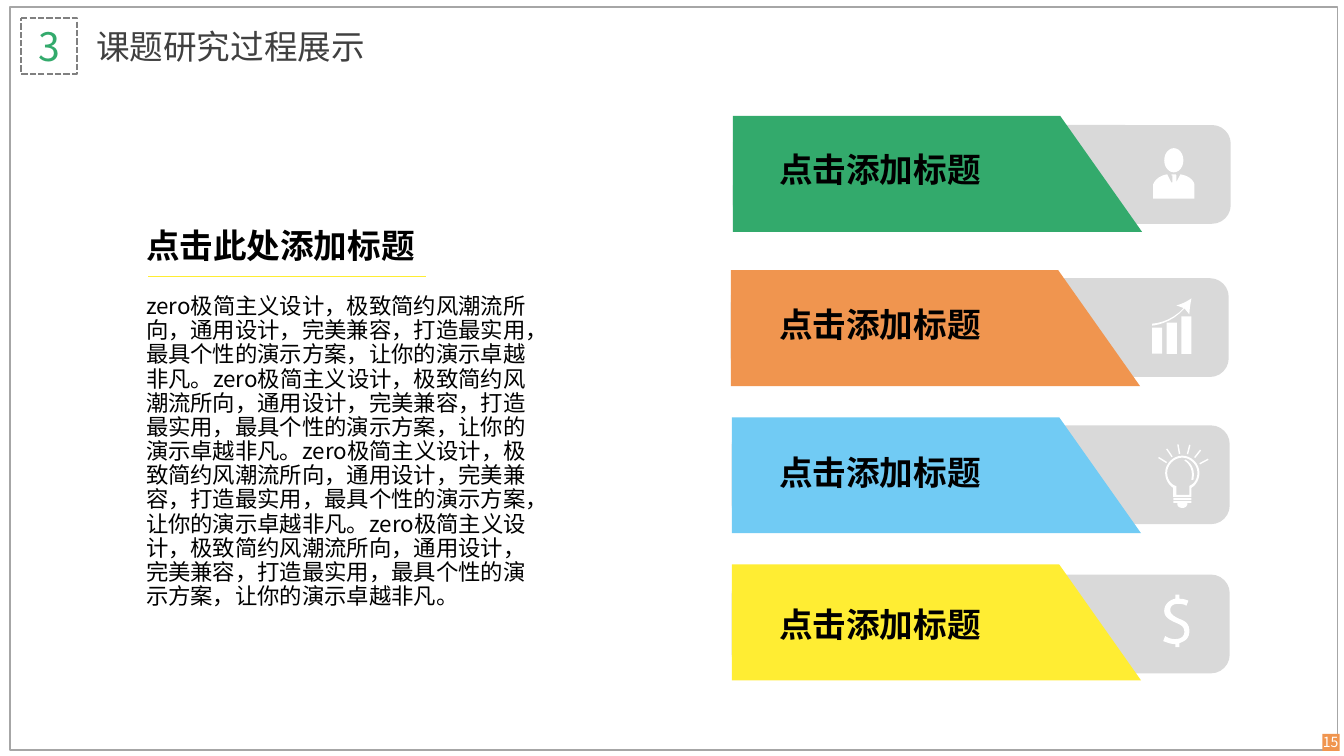
from dataclasses import dataclass
from math import cos, radians, sin

from lxml.etree import SubElement
from pptx import Presentation
from pptx.dml.color import RGBColor
from pptx.enum.dml import MSO_LINE
from pptx.enum.shapes import MSO_CONNECTOR, MSO_SHAPE
from pptx.enum.text import MSO_ANCHOR, MSO_AUTO_SIZE, PP_ALIGN
from pptx.oxml.ns import qn
from pptx.util import Inches, Pt


@dataclass(frozen=True)
class Theme:
    font: str = "Noto Sans CJK SC"
    green: str = "33AA6C"
    orange: str = "F0954F"
    blue: str = "71CBF4"
    yellow: str = "FFED33"
    white: str = "FFFFFF"
    black: str = "000000"
    tab: str = "D9D9D9"
    frame: str = "A6A6A6"
    dash: str = "808080"
    title: str = "404040"
    number_size: int = 28
    heading_size: int = 24
    body_size: int = 16
    page_size: int = 10


THEME = Theme()
SECTION_NUMBER = "3"
SECTION_TITLE = "课题研究过程展示"
PAGE_NUMBER = "15"
HEADING = "点击此处添加标题"
BODY = ("zero极简主义设计，极致简约风潮流所向，通用设计，完美兼容，打造最实用，"
        "最具个性的演示方案，让你的演示卓越非凡。") * 4
LABEL = "点击添加标题"

PERSON = {
    "ellipses": [(11, 0, 19, 24)],
    "outlines": [[[
        (27, 26), (23, 34), (23, 27), (23, 26, 22, 26, 21, 26), (19, 26, 18, 26, 18, 27),
        (19, 27), (19, 34), (18, 34), (14, 26), (7, 27, 2, 31, 0, 36),
        (0, 50), (41, 50), (41, 36), (40, 31, 34, 27, 27, 26)]]],
}
GROWTH = {
    "bars": [(14.5 * column, 55 - height, 10, height) for column, height in enumerate((26, 31, 37))],
    "outlines": [
        [[(0, 27), (0, 25), (0, 25, 18, 25, 33, 8), (33, 9), (19, 26, 0, 27, 0, 27)]],
        [[(39, 0), (38, 5, 37, 12, 37, 16), (32, 10), (24, 7), (29, 6, 35, 3, 39, 0)]]],
}
BULB = {
    "bars": [(15, 53, 18, 2), (15, 56, 18, 2)],
    "outlines": [
        [[(33, 52), (15, 52), (15, 43), (10, 40, 7, 34, 7, 28), (7, 19, 15, 11, 24, 11),
          (33, 11, 41, 19, 41, 28), (41, 34, 38, 40, 33, 43)],
         [(18, 50), (31, 50), (31, 41), (36, 39, 39, 34, 39, 28), (39, 20, 32, 13, 24, 13),
          (16, 13, 9, 20, 9, 28), (9, 34, 12, 39, 17, 41), (18, 41)]],
        [[(20, 57), (29, 57), (29, 57, 29, 58, 29, 59), (29, 61, 27, 63, 24, 63),
          (21, 63, 19, 61, 19, 59), (19, 58, 19, 57, 20, 57)]],
        [[(35, 35), (33, 35), (36, 21, 26, 16, 26, 16), (27, 15), (27, 15, 38, 20, 35, 35)]]],
    "rays": {"center": (24.5, 28), "radii": (19, 28.5), "half_width": 0.7,
             "angles": range(28, 149, 24)},
}
DOLLAR = {
    "outlines": [[[
        (26, 36), (26, 30, 23, 26, 16, 24), (10, 21, 7, 19, 7, 15), (7, 12, 9, 9, 15, 9),
        (19, 9, 22, 10, 23, 11), (25, 6), (23, 5, 20, 4, 16, 4), (16, 0), (12, 0), (12, 4),
        (6, 5, 1, 10, 1, 16), (1, 22, 6, 25, 13, 28), (18, 30, 21, 32, 21, 37),
        (21, 41, 18, 44, 12, 44), (8, 44, 5, 43, 2, 41), (0, 46), (3, 47, 7, 49, 12, 49),
        (12, 52), (16, 52), (16, 48), (23, 46, 26, 42, 26, 36)]]],
}

ROWS = [
    {"color": THEME.green, "left": 7.27, "banner": 1.15, "tab": 1.24, "label": 1.43,
     "icon": PERSON, "icon_at": (11.44, 1.47)},
    {"color": THEME.orange, "left": 7.25, "banner": 2.68, "tab": 2.76, "label": 2.97,
     "icon": GROWTH, "icon_at": (11.43, 2.96)},
    {"color": THEME.blue, "left": 7.26, "banner": 4.14, "tab": 4.22, "label": 4.43,
     "icon": BULB, "icon_at": (11.49, 4.41)},
    {"color": THEME.yellow, "left": 7.26, "banner": 5.6, "tab": 5.7, "label": 5.94,
     "icon": DOLLAR, "icon_at": (11.54, 5.9)},
]
BANNER_LENGTH, BANNER_HEIGHT = 4.06, 1.15
TAB_WIDTH, TAB_HEIGHT, TAB_ROUNDING = 4.94, 0.98, 0.19


def paint(shape, fill=None, line=None, width=1):
    shape.shadow.inherit = False
    if fill:
        shape.fill.solid()
        shape.fill.fore_color.rgb = RGBColor.from_string(fill)
    else:
        shape.fill.background()
    if line:
        shape.line.color.rgb = RGBColor.from_string(line)
        shape.line.width = Pt(width)
    else:
        shape.line.fill.background()
    return shape


def add_preset(shapes, kind, box, rounding=None, **look):
    shape = shapes.add_shape(kind, *map(Inches, box))
    if rounding is not None:
        shape.adjustments[0] = rounding
    return paint(shape, **look)


def write(shape, text, size, color, bold=False, align=PP_ALIGN.LEFT,
          anchor=MSO_ANCHOR.MIDDLE, wrap=True):
    frame = shape.text_frame
    frame.text = text
    frame.word_wrap = wrap
    frame.vertical_anchor = anchor
    paragraph = frame.paragraphs[0]
    paragraph.alignment = align
    run = paragraph.runs[0]
    run.font.size = Pt(size)
    run.font.bold = bold
    run.font.color.rgb = RGBColor.from_string(color)
    run.font.name = THEME.font
    SubElement(run._r.get_or_add_rPr(), qn("a:ea")).set("typeface", THEME.font)
    return paragraph


def add_text(slide, box, text, size, color, grow=True, **style):
    text_box = slide.shapes.add_textbox(*map(Inches, box))
    paragraph = write(text_box, text, size, color, **style)
    if grow:
        text_box.text_frame.auto_size = MSO_AUTO_SIZE.SHAPE_TO_FIT_TEXT
    return paragraph


def flatten(contour, steps=8):
    points = [contour[0]]
    for segment in contour[1:]:
        if len(segment) == 2:
            points.append(segment)
            continue
        corners = [points[-1], segment[:2], segment[2:4], segment[4:]]
        for step in range(1, steps + 1):
            t = step / steps
            weights = ((1 - t) ** 3, 3 * t * (1 - t) ** 2, 3 * t * t * (1 - t), t ** 3)
            points.append(tuple(sum(w * corner[axis] for w, corner in zip(weights, corners))
                                for axis in (0, 1)))
    return points


def ray_outline(center, radii, half_width, angle):
    x, y = cos(radians(angle)), -sin(radians(angle))
    corners = ((radii[0], -1), (radii[1], -1), (radii[1], 1), (radii[0], 1))
    return [[(center[0] + radius * x - side * half_width * y,
              center[1] + radius * y + side * half_width * x) for radius, side in corners]]


def add_icon(slide, icon, left, top):
    shapes = slide.shapes.add_group_shape().shapes
    for key, kind in (("ellipses", MSO_SHAPE.OVAL), ("bars", MSO_SHAPE.RECTANGLE)):
        for x, y, width, height in icon.get(key, []):
            box = (left + x / 100, top + y / 100, width / 100, height / 100)
            add_preset(shapes, kind, box, fill=THEME.white)
    outlines = list(icon["outlines"])
    if "rays" in icon:
        rays = icon["rays"]
        outlines += [ray_outline(rays["center"], rays["radii"], rays["half_width"], angle)
                     for angle in rays["angles"]]
    for outline in outlines:
        contours = [[(Inches(left + x / 100), Inches(top + y / 100)) for x, y in flatten(contour)]
                    for contour in outline]
        builder = shapes.build_freeform(*contours[0][0], scale=1.0)
        for index, contour in enumerate(contours):
            if index:
                builder.move_to(*contour[0])
            builder.add_line_segments(contour[1:], close=True)
        paint(builder.convert_to_shape(), fill=THEME.white)


def add_header(slide):
    shapes = slide.shapes
    add_preset(shapes, MSO_SHAPE.RECTANGLE, (0.1, 0.07, 13.17, 7.37), line=THEME.frame)
    number = add_preset(shapes, MSO_SHAPE.ROUNDED_RECTANGLE, (0.21, 0.18, 0.55, 0.55),
                        rounding=0, line=THEME.dash, width=1.5)
    number.line.dash_style = MSO_LINE.SQUARE_DOT
    frame = number.text_frame
    frame.margin_left = frame.margin_right = frame.margin_top = frame.margin_bottom = 0
    write(number, SECTION_NUMBER, THEME.number_size, THEME.green, align=PP_ALIGN.CENTER)
    add_preset(shapes, MSO_SHAPE.RECTANGLE, (13.12, 7.28, 0.17, 0.17), fill=THEME.orange)
    add_text(slide, (12.98, 7.28, 0.44, 0.17), PAGE_NUMBER, THEME.page_size, THEME.white,
             grow=False, align=PP_ALIGN.CENTER)
    title = add_preset(shapes, MSO_SHAPE.ROUNDED_RECTANGLE, (0.84, 0.18, 3.59, 0.55),
                       rounding=0.09)
    write(title, SECTION_TITLE, THEME.heading_size, THEME.title)


def add_row(slide, row):
    add_preset(slide.shapes, MSO_SHAPE.ROUNDED_RECTANGLE,
               (row["left"], row["tab"], TAB_WIDTH, TAB_HEIGHT),
               rounding=TAB_ROUNDING, fill=THEME.tab)
    add_icon(slide, row["icon"], *row["icon_at"])
    turn = (BANNER_LENGTH - BANNER_HEIGHT) / 2
    banner = add_preset(slide.shapes, MSO_SHAPE.FLOWCHART_MANUAL_INPUT,
                        (row["left"] + turn, row["banner"] - turn, BANNER_HEIGHT, BANNER_LENGTH),
                        fill=row["color"])
    banner.rotation = 90
    add_text(slide, (7.63, row["label"], 2.22, 0.51), LABEL, THEME.heading_size, THEME.black,
             bold=True, anchor=MSO_ANCHOR.TOP, wrap=False)


def add_description(slide):
    add_text(slide, (1.35, 2.18, 2.89, 0.51), HEADING, THEME.heading_size, THEME.black,
             bold=True, anchor=MSO_ANCHOR.TOP, wrap=False)
    paragraph = add_text(slide, (1.35, 2.88, 4.15, 3.25), BODY, THEME.body_size, THEME.black,
                         anchor=MSO_ANCHOR.TOP)
    paragraph.line_spacing = 0.9
    paragraph.space_before = Pt(10)
    underline = slide.shapes.add_connector(MSO_CONNECTOR.STRAIGHT,
                                           *map(Inches, (1.47, 2.74, 4.23, 2.74)))
    underline.line.color.rgb = RGBColor.from_string(THEME.yellow)
    underline.line.width = Pt(0.5)
    SubElement(underline._element.spPr, qn("a:effectLst"))


def main():
    presentation = Presentation()
    presentation.slide_width, presentation.slide_height = Inches(40 / 3), Inches(7.5)
    slide = presentation.slides.add_slide(presentation.slide_layouts[6])
    add_header(slide)
    for row in ROWS:
        add_row(slide, row)
    add_description(slide)
    presentation.save("out.pptx")


if __name__ == "__main__":
    main()
